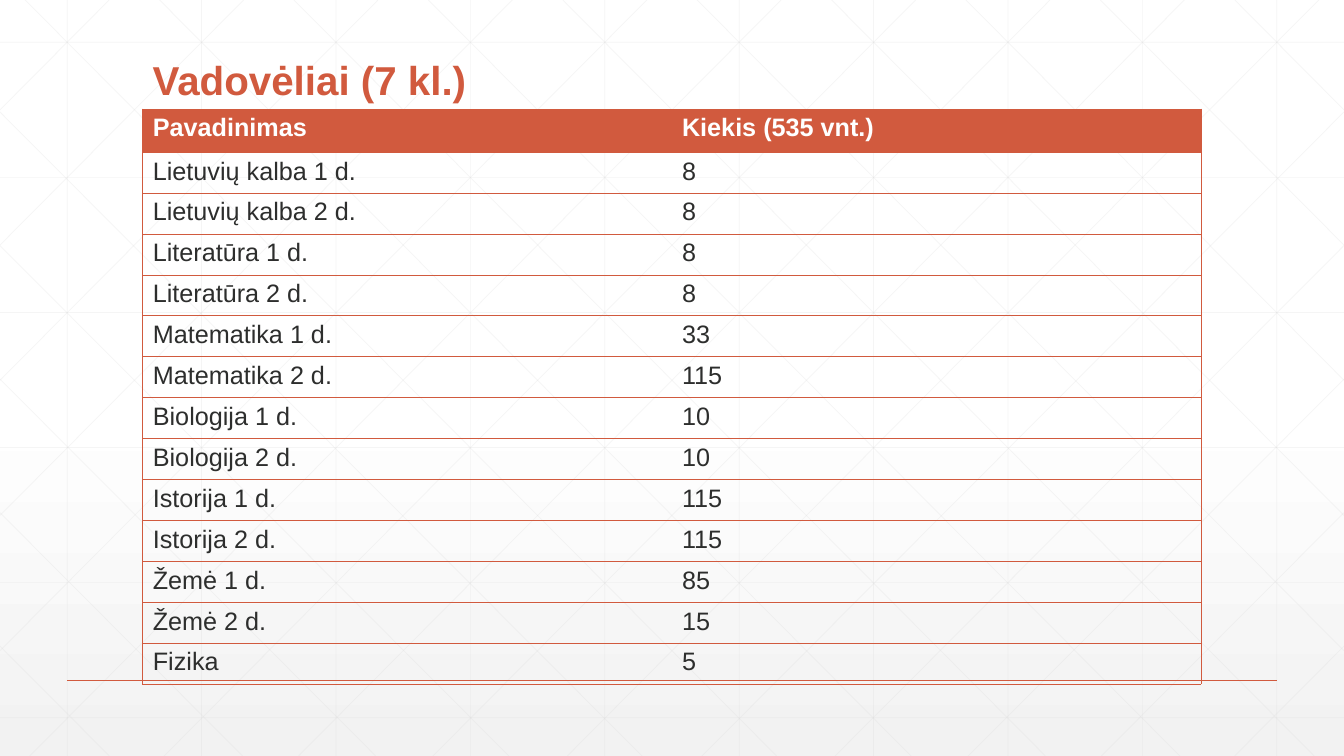
"""Build the slide listing grade 7 textbooks over a faint lattice."""
from copy import deepcopy

from lxml import etree
from pptx import Presentation
from pptx import util as u
from pptx.dml.color import RGBColor
from pptx.enum import shapes, text
from pptx.oxml import ns

TITLE = "Vadovėliai (7 kl.)"
BOOKS = [
    ("Pavadinimas", "Kiekis (535 vnt.)"),
    ("Lietuvių kalba 1 d.", "8"),
    ("Lietuvių kalba 2 d.", "8"),
    ("Literatūra 1 d.", "8"),
    ("Literatūra 2 d.", "8"),
    ("Matematika 1 d.", "33"),
    ("Matematika 2 d.", "115"),
    ("Biologija 1 d.", "10"),
    ("Biologija 2 d.", "10"),
    ("Istorija 1 d.", "115"),
    ("Istorija 2 d.", "115"),
    ("Žemė 1 d.", "85"),
    ("Žemė 2 d.", "15"),
    ("Fizika", "5"),
]
FONT = "Arial"
ACCENT = RGBColor(0xD1, 0x5A, 0x3E)
INK = RGBColor(0x2D, 0x2E, 0x2D)
WHITE = RGBColor(0xFF, 0xFF, 0xFF)
PALE = RGBColor(0xF2, 0xF2, 0xF2)
LATTICE = RGBColor(0xD9, 0xD9, 0xD9)

WIDTH, HEIGHT = 960, 540
LEFT, TABLE_TOP, TABLE_WIDTH = 102, 77.76, 756
HEAD_HEIGHT, ROW_HEIGHT = 30.9, 29.23
STEP = 96


def add_node(parent, tag, **attributes):
    return etree.SubElement(parent, ns.qn(tag), attributes)


def paint_background(slide):
    fill = slide.background.fill
    fill.gradient()
    fill.gradient_angle = 270
    stops = slide.element.find(".//" + ns.qn("a:gsLst"))
    stops.insert(1, deepcopy(stops[0]))
    looks = [(0, WHITE), (0.53, WHITE), (1, PALE)]
    for stop, (position, color) in zip(fill.gradient_stops, looks):
        stop.position = position
        stop.color.rgb = color


def add_line(slide, start, end, color, width, opacity=100):
    points = [u.Pt(value) for value in (*start, *end)]
    line = slide.shapes.add_connector(shapes.MSO_CONNECTOR.STRAIGHT, *points)
    line.line.color.rgb = color
    line.line.width = u.Pt(width)
    properties = line.element.spPr
    if opacity < 100:
        tint = properties.find(".//" + ns.qn("a:srgbClr"))
        add_node(tint, "a:alpha", val=str(opacity * 1000))
    add_node(properties, "a:effectLst")


def lattice_lines():
    lines = [((x, 0), (x, HEIGHT)) for x in range(48, WIDTH, STEP)]
    for row in range(6):
        y = 30.24 + 96.48 * row
        lines.append(((0, y), (WIDTH, y)))
    diagonals = []
    for x in range(18, WIDTH, STEP):
        drop = min(HEIGHT, (WIDTH - x) / 0.994)
        diagonals.append(((x, 0), (x + drop * 0.994, drop)))
    for row in range(5):
        y = 80 + 95.4 * row
        diagonals.append(((0, y), ((HEIGHT - y) * 0.997, HEIGHT)))
    mirrored = [((WIDTH - x1, y1), (WIDTH - x2, y2))
                for (x1, y1), (x2, y2) in diagonals]
    return lines + diagonals + mirrored


def write(frame, words, size, color, bold=False, spacing=1.0):
    para = frame.paragraphs[0]
    para.line_spacing = spacing
    span = para.add_run()
    span.text = words
    span.font.name = FONT
    span.font.size = u.Pt(size)
    span.font.bold = bold
    span.font.color.rgb = color


def add_borders(cell):
    properties = cell._tc.get_or_add_tcPr()
    for index, side in enumerate(("a:lnL", "a:lnR", "a:lnT", "a:lnB")):
        border = etree.Element(ns.qn(side), w=str(u.Pt(0.5)))
        fill = add_node(border, "a:solidFill")
        add_node(fill, "a:srgbClr", val=str(ACCENT))
        properties.insert(index, border)
        if side in hidden_sides(cell):
            border.replace(fill, etree.Element(ns.qn("a:noFill")))


def hidden_sides(cell):
    first = cell._tc.col_idx == 0
    return ("a:lnR",) if first else ("a:lnL",)


def add_title(slide):
    box = slide.shapes.add_textbox(
        u.Pt(LEFT), u.Pt(39.6), u.Pt(TABLE_WIDTH), u.Pt(38.16))
    frame = box.text_frame
    frame.word_wrap = True
    frame.vertical_anchor = text.MSO_ANCHOR.BOTTOM
    write(frame, TITLE, size=28.8, color=ACCENT, bold=True, spacing=0.9)


def add_books(slide):
    total = HEAD_HEIGHT + ROW_HEIGHT * (len(BOOKS) - 1)
    table = slide.shapes.add_table(
        len(BOOKS), 2, u.Pt(LEFT), u.Pt(TABLE_TOP),
        u.Pt(TABLE_WIDTH), u.Pt(total)).table
    table.horz_banding = False
    for index, book in enumerate(BOOKS):
        head = index == 0
        table.rows[index].height = u.Pt(HEAD_HEIGHT if head else ROW_HEIGHT)
        for column, words in enumerate(book):
            cell = table.cell(index, column)
            if head:
                cell.fill.solid()
                cell.fill.fore_color.rgb = ACCENT
            else:
                cell.fill.background()
            write(cell.text_frame, words, size=18,
                  color=WHITE if head else INK, bold=head)
            add_borders(cell)


def main():
    deck = Presentation()
    deck.slide_width, deck.slide_height = u.Pt(WIDTH), u.Pt(HEIGHT)
    page = deck.slides.add_slide(deck.slide_layouts[6])
    paint_background(page)
    for start, end in lattice_lines():
        add_line(page, start, end, LATTICE, 0.5, opacity=25)
    add_line(page, (48, 486), (912, 486), ACCENT, 1)
    add_title(page)
    add_books(page)
    deck.save("out.pptx")


if __name__ == "__main__":
    main()
